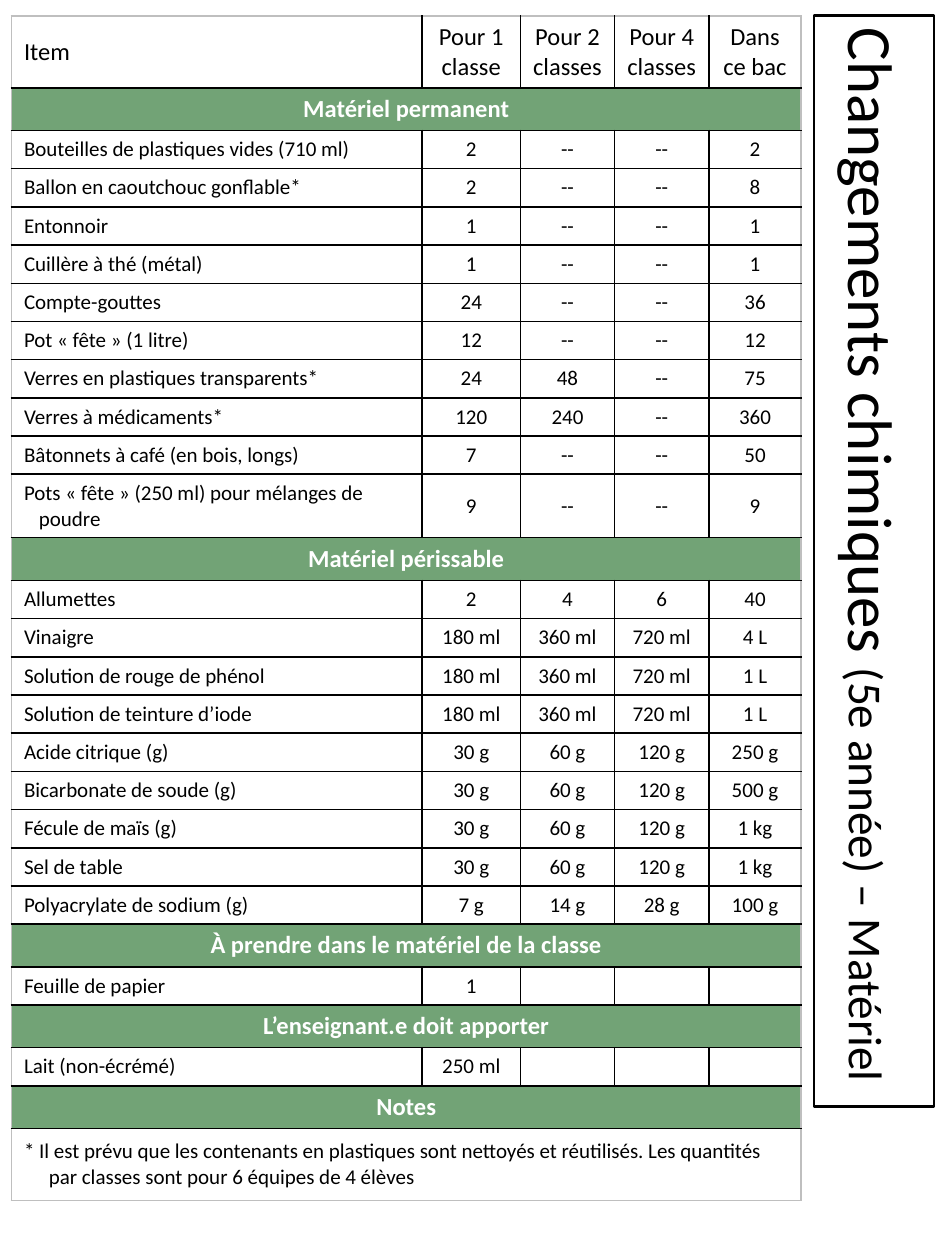
from lxml.etree import SubElement
from pptx import Presentation
from pptx.dml.color import RGBColor
from pptx.enum.text import MSO_ANCHOR, PP_ALIGN
from pptx.oxml.ns import qn
from pptx.util import Cm, Pt

MIDDLE = MSO_ANCHOR.MIDDLE
LEFT, CENTER = PP_ALIGN.LEFT, PP_ALIGN.CENTER
FONT = "Calibri"
COLORS = {"ink": "000000", "band": "72A376", "light": "FFFFFF", "edge": "BFBFBF"}
WIDTHS = [8.28, 1.98, 1.9, 1.9, 1.86]
HEAD = ["Item", "Pour 1 classe", "Pour 2 classes", "Pour 4 classes", "Dans ce bac"]
NOTE = (
    "* Il est prévu que les contenants en plastiques sont nettoyés et réutilisés. "
    "Les quantités par classes sont pour 6 équipes de 4 élèves"
)
PARTS = {
    "Matériel permanent": [
        ["Bouteilles de plastiques vides (710 ml)", "2", "--", "--", "2"],
        ["Ballon en caoutchouc gonflable*", "2", "--", "--", "8"],
        ["Entonnoir", "1", "--", "--", "1"],
        ["Cuillère à thé (métal)", "1", "--", "--", "1"],
        ["Compte-gouttes", "24", "--", "--", "36"],
        ["Pot « fête » (1 litre)", "12", "--", "--", "12"],
        ["Verres en plastiques transparents*", "24", "48", "--", "75"],
        ["Verres à médicaments*", "120", "240", "--", "360"],
        ["Bâtonnets à café (en bois, longs)", "7", "--", "--", "50"],
        ["Pots « fête » (250 ml) pour mélanges de poudre", "9", "--", "--", "9"],
    ],
    "Matériel périssable": [
        ["Allumettes", "2", "4", "6", "40"],
        ["Vinaigre", "180 ml", "360 ml", "720 ml", "4 L"],
        ["Solution de rouge de phénol", "180 ml", "360 ml", "720 ml", "1 L"],
        ["Solution de teinture d’iode", "180 ml", "360 ml", "720 ml", "1 L"],
        ["Acide citrique (g)", "30 g", "60 g", "120 g", "250 g"],
        ["Bicarbonate de soude (g)", "30 g", "60 g", "120 g", "500 g"],
        ["Fécule de maïs (g)", "30 g", "60 g", "120 g", "1 kg"],
        ["Sel de table", "30 g", "60 g", "120 g", "1 kg"],
        ["Polyacrylate de sodium (g)", "7 g", "14 g", "28 g", "100 g"],
    ],
    "À prendre dans le matériel de la classe": [
        ["Feuille de papier", "1", "", "", ""],
    ],
    "L’enseignant.e doit apporter": [
        ["Lait (non-écrémé)", "250 ml", "", "", ""],
    ],
    "Notes": [[NOTE]],
}


def rgb(name):
    return RGBColor.from_string(COLORS[name])


def style(run, size, color="ink", bold=False):
    font = run.font
    font.name, font.size, font.bold = FONT, Pt(size), bold
    font.color.rgb = rgb(color)


def add_title(slide):
    """Add the framed title, turned to read downwards."""
    box = slide.shapes.add_textbox(Cm(6.62), Cm(10.1), Cm(22), Cm(2.42))
    box.rotation = 90
    box.line.color.rgb = rgb("ink")
    box.line.width = Pt(1.5)
    frame = box.text_frame
    frame.word_wrap = True
    frame.vertical_anchor = MIDDLE
    para = frame.paragraphs[0]
    for text, size in [("Changements chimiques ", 36), ("(5e année) – Matériel", 27)]:
        run = para.add_run()
        run.text = text
        style(run, size)


def border(cell, side, color):
    line = SubElement(cell._tc.get_or_add_tcPr(), qn(f"a:{side}"), w=str(Pt(1)))
    fill = SubElement(line, qn("a:solidFill"))
    SubElement(fill, qn("a:srgbClr"), val=COLORS[color])


def rule_row(table, row, whole):
    """Rule the inside in black and the outside in grey; whole means one wide cell."""
    last_row, last_col = len(table.rows) - 1, len(WIDTHS) - 1
    for col in range(last_col + 1):
        outer = {
            "lnL": whole or col == 0,
            "lnR": whole or col == last_col,
            "lnT": row == 0,
            "lnB": row == last_row,
        }
        for side, edge in outer.items():
            border(table.cell(row, col), side, "edge" if edge else "ink")


def fill_cell(cell, text, size, align, color="ink", bold=False, indent=0):
    cell.vertical_anchor = MIDDLE
    para = cell.text_frame.paragraphs[0]
    para.text = text
    para.alignment = align
    if indent:
        props = para._p.get_or_add_pPr()
        props.set("marL", str(Cm(indent)))
        props.set("indent", str(-Cm(indent)))
    for run in para.runs:
        style(run, size, color, bold)
    if not text:
        SubElement(para._p, qn("a:endParaRPr"), sz=str(size * 100))
    if bold:
        cell.fill.solid()
        cell.fill.fore_color.rgb = rgb("band")
    else:
        cell.fill.background()


def fill_row(table, row, texts, height, size=12, indent=0.3, **look):
    """Write one row; a single text spans all columns."""
    table.rows[row].height = Cm(height)
    whole = len(texts) == 1
    rule_row(table, row, whole)
    if whole:
        table.cell(row, 0).merge(table.cell(row, len(WIDTHS) - 1))
    for col, text in enumerate(texts):
        align = CENTER if col or look else LEFT
        fill_cell(table.cell(row, col), text, size, align, indent=0 if col else indent, **look)


def add_list(slide):
    count = 1 + sum(1 + len(items) for items in PARTS.values())
    frame = slide.shapes.add_table(
        count, len(WIDTHS), Cm(0.23), Cm(0.32), Cm(sum(WIDTHS)), Cm(23.88)
    )
    table = frame.table
    table.first_row = table.horz_banding = False
    for col, width in zip(table.columns, WIDTHS):
        col.width = Cm(width)
    fill_row(table, 0, HEAD, 1.45, size=14, indent=0)
    row = 1
    for name, items in PARTS.items():
        fill_row(table, row, [name], 0.86, size=14, indent=0, color="light", bold=True)
        for row, texts in enumerate(items, row + 1):
            if texts == [NOTE]:
                fill_row(table, row, texts, 1.45, indent=0.5)
            else:
                fill_row(table, row, texts, 1.28 if len(texts[0]) > 40 else 0.77)
        row += 1


def main():
    deck = Presentation()
    deck.slide_width, deck.slide_height = Cm(19.05), Cm(25.4)
    slide = deck.slides.add_slide(deck.slide_layouts[6])
    add_title(slide)
    add_list(slide)
    deck.save("out.pptx")


if __name__ == "__main__":
    main()
